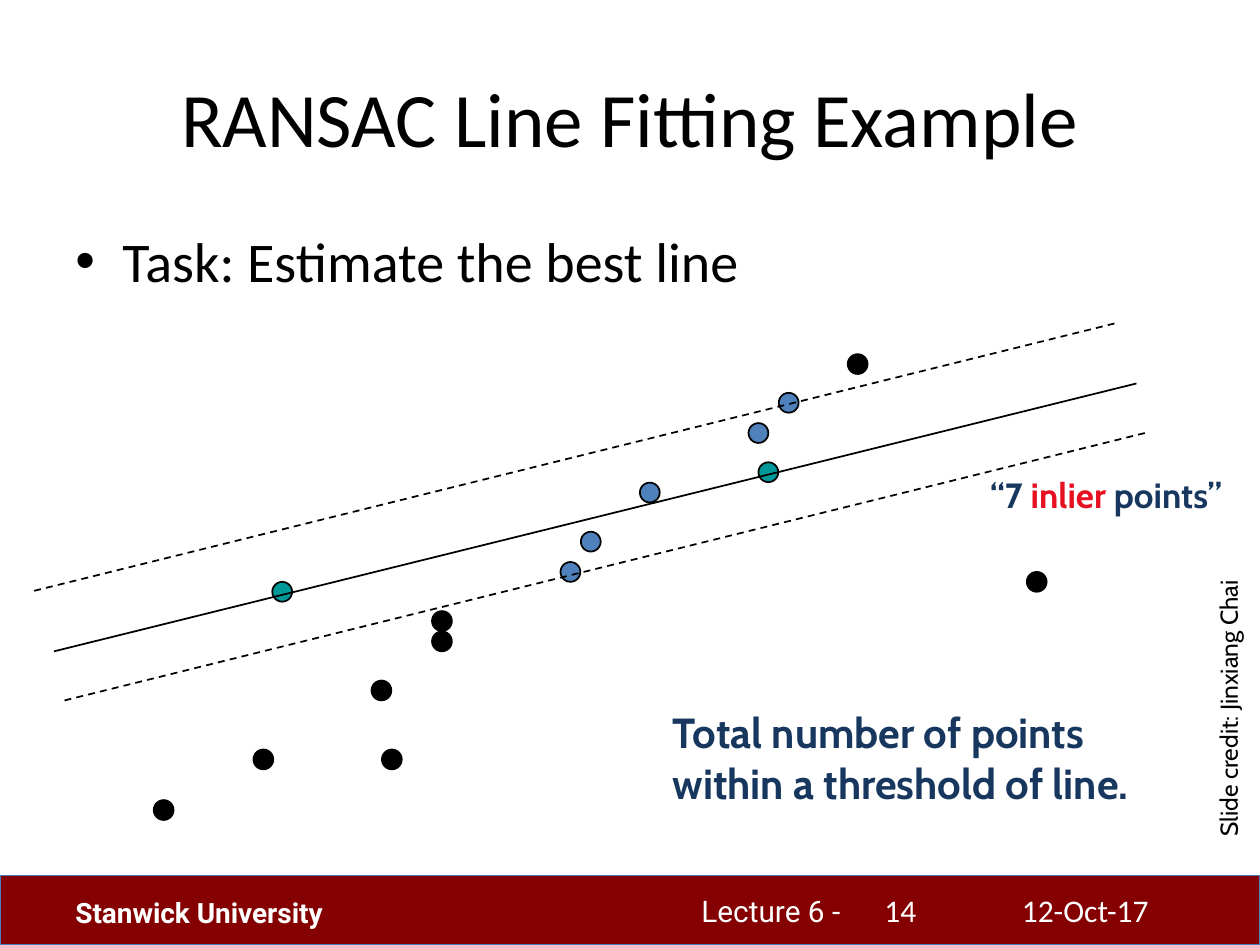
import pptx
import pptx.util
import pptx.dml.color
import pptx.enum.dml
import pptx.enum.shapes
import pptx.enum.text
import pptx.oxml.ns
from lxml import etree

Cm, Pt = pptx.util.Cm, pptx.util.Pt
shapes = pptx.enum.shapes
qn = pptx.oxml.ns.qn
hues = {"black": "000000", "white": "FFFFFF", "navy": "17375E", "red": "E61020",
        "maroon": "850000", "edge": "4B7EBC", "blue": "4F81BD", "teal": "009999"}


def tint(name):
    return pptx.dml.color.RGBColor.from_string(hues[name])


def write(left, top, width, height, font, size, runs, bold=False):
    """Add a text box of one paragraph; runs are (text, colour) pairs."""
    box = deck.shapes.add_textbox(Cm(left), Cm(top), Cm(width), Cm(height))
    box.text_frame.word_wrap = True
    for text, hue in runs:
        run = box.text_frame.paragraphs[0].add_run()
        run.text = text
        run.font.name = font
        run.font.size = Pt(size)
        run.font.bold = bold
        run.font.color.rgb = tint(hue)
    return box


show = pptx.Presentation()
show.slide_width, show.slide_height = Cm(25.4), Cm(19.05)
deck = show.slides.add_slide(show.slide_layouts[6])

# Footer
bar = deck.shapes.add_shape(shapes.MSO_SHAPE.RECTANGLE, 0, Cm(17.65), Cm(25.4), Cm(1.4))
bar.shadow.inherit = False
bar.fill.solid()
bar.fill.fore_color.rgb = tint("maroon")
bar.line.color.rgb = tint("edge")
bar.line.width = Pt(0.75)
write(13.89, 17.88, 6.2, 0.95, "Roboto", 17, [("Lecture 6 -", "white")])
write(1.27, 17.93, 6.78, 0.94, "Roboto", 16, [("Stanwick University", "white")], True)
write(20.35, 17.83, 4.42, 1.02, "Calibri", 18, [("12-Oct-17", "white")])
write(17.58, 17.83, 2.79, 1.02, "Calibri", 18, [("14", "white")])

# Title and task
title = write(1.27, 0.76, 22.86, 3.18, "Calibri", 44,
              [("RANSAC Line Fitting Example", "black")])
title.text_frame.vertical_anchor = pptx.enum.text.MSO_ANCHOR.MIDDLE
title.text_frame.paragraphs[0].alignment = pptx.enum.text.PP_ALIGN.CENTER

task = write(1.27, 4.45, 22.86, 12.57, "Calibri", 32,
             [("Task: Estimate the best line", "black")])
props = task.text_frame.paragraphs[0]._p.get_or_add_pPr()
props.set("marL", str(Cm(0.95)))
props.set("indent", str(-Cm(0.95)))
etree.SubElement(props, qn("a:buFont")).set("typeface", "Arial")
etree.SubElement(props, qn("a:buChar")).set("char", "•")

# Points: other inliers, outliers, and the two that define the line
dots = {
    "blue": [(11.3, 11.33), (15.7, 7.92), (12.9, 9.73), (15.09, 8.53), (11.71, 10.72)],
    "black": [(8.71, 12.73), (3.1, 16.13), (5.11, 15.11), (17.09, 7.14),
              (7.49, 13.72), (8.71, 12.32), (7.7, 15.11), (20.7, 11.53)],
    "teal": [(15.29, 9.32), (5.49, 11.73)],
}
for hue, spots in dots.items():
    for left, top in spots:
        dot = deck.shapes.add_shape(shapes.MSO_SHAPE.OVAL, Cm(left), Cm(top), Cm(0.4), Cm(0.4))
        dot.shadow.inherit = False
        dot.fill.solid()
        dot.fill.fore_color.rgb = tint(hue)
        dot.line.color.rgb = tint("black")
        dot.line.width = Pt(1)

write(13.31, 14.12, 10.8, 3, "Cabin", 24,
      [("Total number of points within a threshold of line.", "navy")], True)

# Fitted line and its threshold band, all parallel
run_x, rise = 21.82, 5.4
for left, base, dashed in [(1.09, 13.13, False), (1.3, 14.12, True), (0.69, 11.91, True)]:
    line = deck.shapes.add_connector(shapes.MSO_CONNECTOR.STRAIGHT, Cm(left), Cm(base),
                                     Cm(left + run_x), Cm(base - rise))
    line.line.color.rgb = tint("black")
    line.line.width = Pt(1)
    if dashed:
        line.line.dash_style = pptx.enum.dml.MSO_LINE.DASH
    etree.SubElement(line._element.spPr, qn("a:effectLst"))

write(19.71, 9.42, 5.99, 1.11, "Cabin", 20,
      [("“7 ", "navy"), ("inlier", "red"), (" points”", "navy")], True)
credit = write(21.59, 13.51, 6.35, 0.86, "Cabin", 14, [("Slide credit: Jinxiang Chai", "black")])
credit.rotation = 270

show.save("out.pptx")
